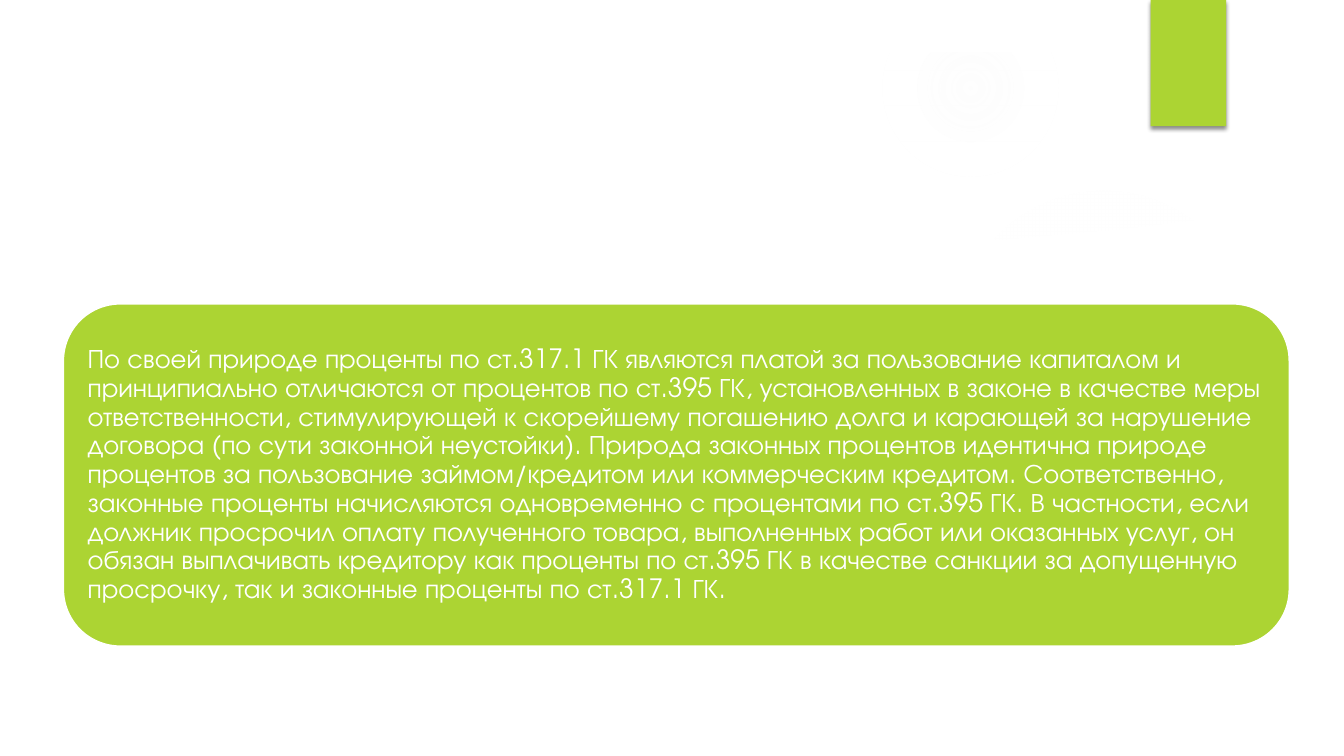
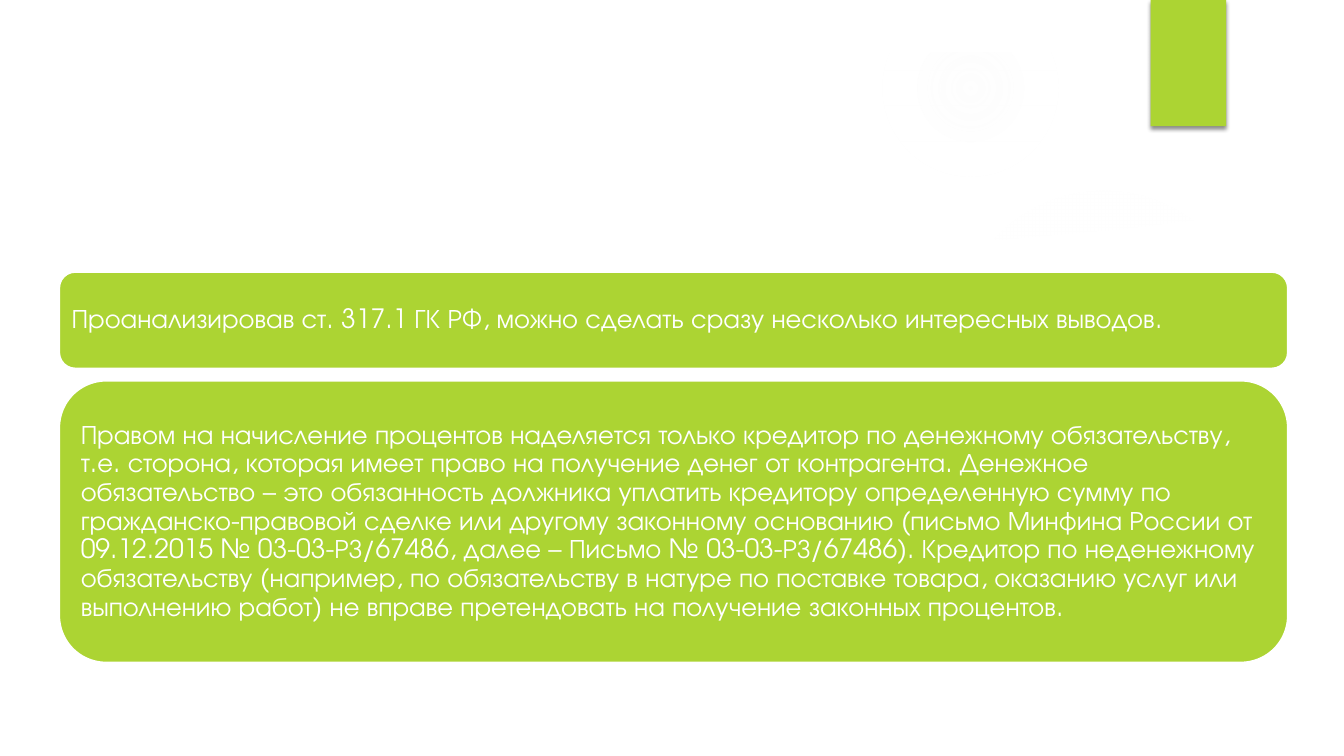
import pptx
import pptx.util
import pptx.dml.color
import pptx.enum.shapes
import pptx.enum.text
import pptx.oxml

Cm = pptx.util.Cm
Pt = pptx.util.Pt
SHAPE = pptx.enum.shapes.MSO_SHAPE
GREEN = pptx.dml.color.RGBColor(0xAC, 0xD4, 0x33)
WHITE = pptx.dml.color.RGBColor(0xFF, 0xFF, 0xFF)
MIST = pptx.dml.color.RGBColor(0xF7, 0xF7, 0xF7)
FONT = "TeX Gyre Adventor"
SIZE = Pt(19)
INSET = Cm(0.2)
GAP = Cm(0.3)
WIDE = 33.87
HIGH = 19.05
EDGE = 1.32
SPACE = 'xmlns:a="http://schemas.openxmlformats.org/drawingml/2006/main"'

SHADE = (
    f'<a:effectLst {SPACE}>'
    '<a:outerShdw blurRad="38100" dist="25400" dir="5400000" rotWithShape="0">'
    '<a:srgbClr val="000000"><a:alpha val="45000"/></a:srgbClr>'
    '</a:outerShdw></a:effectLst>'
)

GLOWS = [
    (0, 7.42, 11.63, [(0, 11), (36, 10), (75, 0)]),
    (0, 8.05, 6.55, [(0, 8), (36, 8), (72, 0)]),
    (23.9, 4.65, 7.82, [(0, 7), (36, 6), (69, 0)]),
    (22.23, 0, 4.45, [(0, 14), (36, 7), (73, 0)]),
    (23.9, 16.31, 2.74, [(0, 14), (36, 7), (66, 0)]),
]
RIBBON = [
    (23.72, 6.35), (25.48, 6.28), (27.99, 6.05), (30.63, 5.75),
    (32.74, 5.44), (32.59, 4.22), (31.39, 4.6), (29.92, 5.03),
    (28.47, 5.36), (27.03, 5.66), (25.65, 5.89), (23.62, 6.17),
]
SHEET = [
    (1.27, 5.18), (1.27, 17.78), (32.61, 17.78), (32.61, 5.18),
    (31.19, 5.41), (29.77, 5.59), (28.35, 5.77), (26.92, 5.89),
    (25.5, 6.02), (24.1, 6.12), (22.71, 6.2), (21.34, 6.25),
    (18.64, 6.3), (16.69, 6.3), (14.81, 6.25), (12.98, 6.2),
    (11.28, 6.12), (9.14, 5.99), (7.19, 5.84), (5.49, 5.69),
    (4.04, 5.54), (2.87, 5.38),
]
OUTER = [(0, 0), (0, HIGH), (WIDE, HIGH), (WIDE, 0)]
INNER = [
    (WIDE - EDGE, HIGH - EDGE), (EDGE, HIGH - EDGE),
    (EDGE, EDGE), (WIDE - EDGE, EDGE),
]

NATURE = (
    "По своей природе проценты по ст.317.1 ГК являются платой за пользование "
    "капиталом и принципиально отличаются от процентов по ст.395 ГК, "
    "установленных в законе в качестве меры ответственности, стимулирующей к "
    "скорейшему погашению долга и карающей за нарушение договора (по сути "
    "законной неустойки). Природа законных процентов идентична природе "
    "процентов за пользование займом/кредитом или коммерческим кредитом. "
    "Соответственно, законные проценты начисляются одновременно с процентами "
    "по ст.395 ГК. В частности, если должник просрочил оплату полученного "
    "товара, выполненных работ или оказанных услуг, он обязан выплачивать "
    "кредитору как проценты по ст.395 ГК в качестве санкции за допущенную "
    "просрочку, так и законные проценты по ст.317.1 ГК."
)
INTRO = (
    "Проанализировав ст. 317.1 ГК РФ, можно сделать сразу несколько "
    "интересных выводов."
)
RIGHT = (
    "Правом на начисление процентов наделяется только кредитор по денежному "
    "обязательству, т.е. сторона, которая имеет право на получение денег от "
    "контрагента. Денежное обязательство – это обязанность должника уплатить "
    "кредитору определенную сумму по гражданско-правовой сделке или другому "
    "законному основанию (письмо Минфина России от 09.12.2015 "
    "№ 03-03-РЗ/67486, далее – Письмо № 03-03-РЗ/67486). Кредитор по "
    "неденежному обязательству (например, по обязательству в натуре по "
    "поставке товара, оказанию услуг или выполнению работ) не вправе "
    "претендовать на получение законных процентов."
)


def paint(shape, color):
    shape.shadow.inherit = False
    shape.fill.solid()
    shape.fill.fore_color.rgb = color
    shape.line.fill.background()


def add_glow(slide, left, top, size, stops):
    glow = slide.shapes.add_shape(SHAPE.OVAL, left, top, size, size)
    glow.shadow.inherit = False
    glow.line.fill.background()
    marks = "".join(
        f'<a:gs pos="{spot * 1000}"><a:srgbClr val="{MIST}">'
        f'<a:alpha val="{alpha * 1000}"/></a:srgbClr></a:gs>'
        for spot, alpha in stops)
    grad = pptx.oxml.parse_xml(
        f'<a:gradFill {SPACE} rotWithShape="1"><a:gsLst>{marks}</a:gsLst>'
        '<a:path path="circle"><a:fillToRect l="50000" t="50000" '
        'r="50000" b="50000"/></a:path></a:gradFill>')
    glow._element.spPr.insert(2, grad)


def add_form(slide, *rings):
    rings = [[(Cm(x), Cm(y)) for x, y in ring] for ring in rings]
    form = slide.shapes.build_freeform(*rings[0][0])
    form.add_line_segments(rings[0][1:], close=True)
    for ring in rings[1:]:
        form.move_to(*ring[0])
        form.add_line_segments(ring[1:], close=True)
    shape = form.convert_to_shape()
    paint(shape, WHITE)
    return shape


def add_scene(slide):
    for left, top, size, stops in GLOWS:
        add_glow(slide, Cm(left), Cm(top), Cm(size), stops)
    ribbon = add_form(slide, RIBBON)
    tint = ribbon._element.spPr.find(".//{*}srgbClr")
    tint.append(pptx.oxml.parse_xml(f'<a:alpha {SPACE} val="20000"/>'))
    add_form(slide, SHEET)
    add_form(slide, OUTER, INNER)


def add_tab(slide, left, top, width, height):
    tab = slide.shapes.add_shape(SHAPE.RECTANGLE, left, top, width, height)
    tab.fill.solid()
    tab.fill.fore_color.rgb = GREEN
    tab.line.fill.background()
    tab._element.spPr.append(pptx.oxml.parse_xml(SHADE))


def add_panel(slide, left, top, width, height, text):
    panel = slide.shapes.add_shape(
        SHAPE.ROUNDED_RECTANGLE, left, top, width, height)
    paint(panel, GREEN)
    panel.line.color.rgb = WHITE
    panel.line.width = Pt(1.5)
    frame = panel.text_frame
    frame.word_wrap = True
    frame.vertical_anchor = pptx.enum.text.MSO_ANCHOR.MIDDLE
    frame.margin_left = frame.margin_right = INSET
    frame.margin_top = frame.margin_bottom = INSET
    frame.text = text
    para = frame.paragraphs[0]
    para.alignment = pptx.enum.text.PP_ALIGN.LEFT
    para.line_spacing = 0.9
    font = para.runs[0].font
    font.name = FONT
    font.size = SIZE
    font.color.rgb = WHITE


def add_slide(deck, left, top, width, panels):
    slide = deck.slides.add_slide(deck.slide_layouts[6])
    add_scene(slide)
    add_tab(slide, Cm(29), 0, Cm(1.9), Cm(3.18))
    for height, text in panels:
        add_panel(slide, left, top, width, height, text)
        top += height + GAP


def main():
    deck = pptx.Presentation()
    deck.slide_width = Cm(WIDE)
    deck.slide_height = Cm(HIGH)
    add_slide(deck, Cm(1.59), Cm(7.65), Cm(30.91), [(Cm(8.64), NATURE)])
    add_slide(deck, Cm(1.49), Cm(6.85), Cm(30.97),
              [(Cm(2.44), INTRO), (Cm(7.11), RIGHT)])
    deck.save("out.pptx")


if __name__ == "__main__":
    main()
